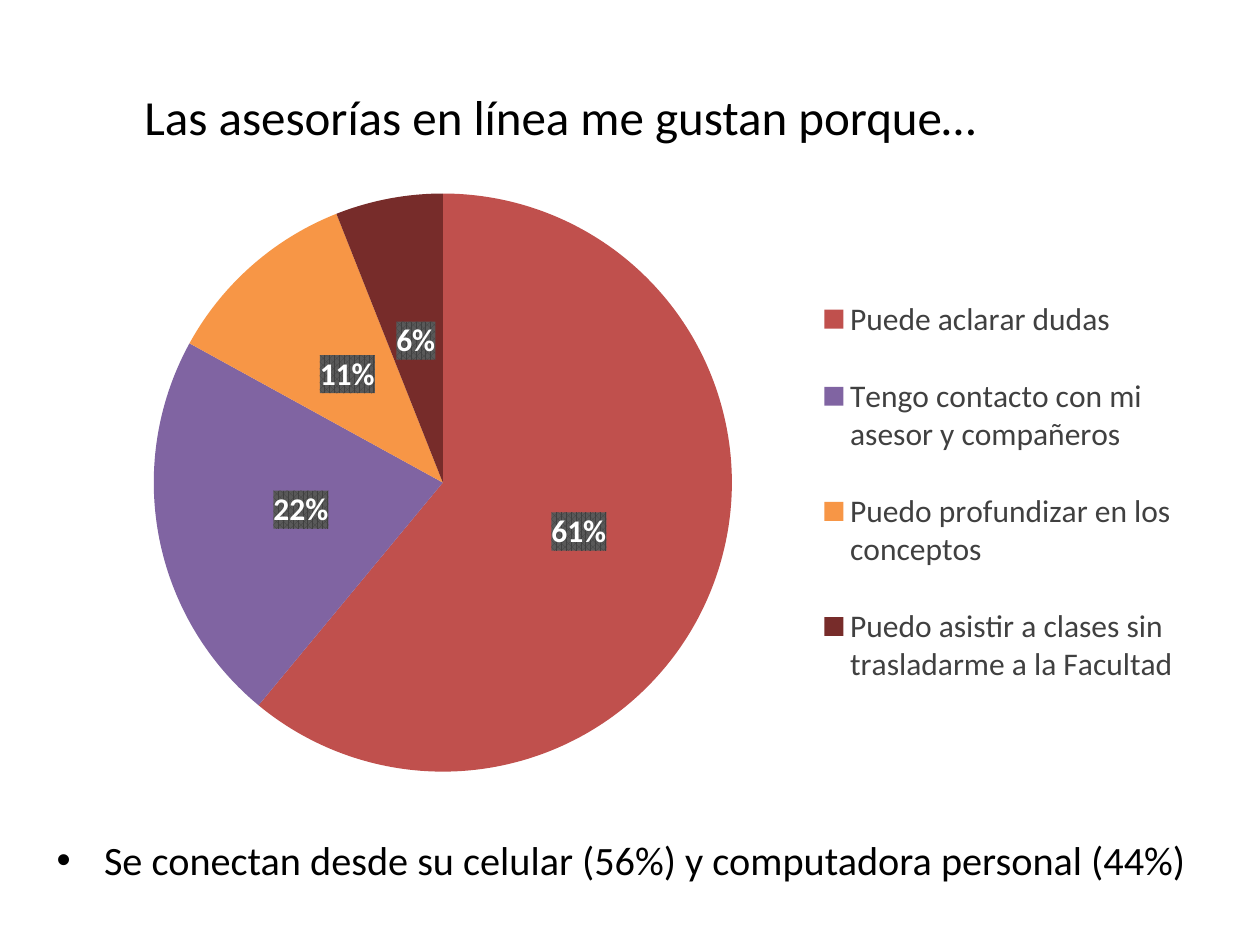
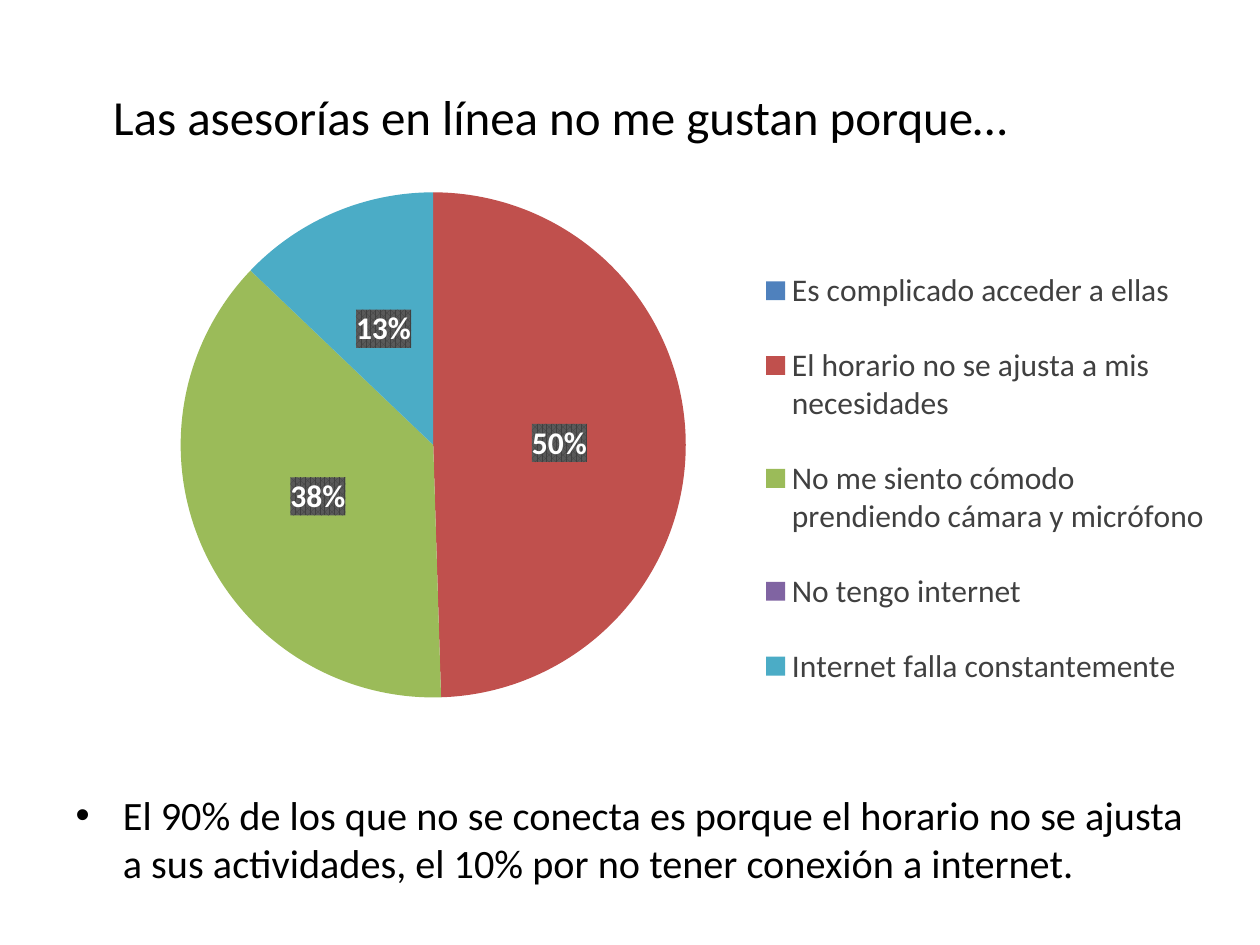
"""Build two survey slides, each with a title, a pie chart and a remark."""
from lxml import etree
from pptx import Presentation
from pptx import util as u
from pptx.chart.data import CategoryChartData
from pptx.dml.color import RGBColor
from pptx.enum import chart as charts, text
from pptx.oxml import parse_xml
from pptx.oxml.ns import nsdecls, qn

COLORS = {
    "ink": "000000", "legend": "404040", "label": "FFFFFF",
    "label_dark": "404040", "label_light": "595959",
    "blue": "4F81BD", "red": "C0504D", "green": "9BBB59", "violet": "8064A2",
    "aqua": "4BACC6", "orange": "F79646", "maroon": "772C2A",
}
FONTS = {
    "title": {"name": "Calibri", "size": u.Pt(28)},
    "remark": {"name": "Calibri", "size": u.Pt(23)},
    "chart": {"name": "Calibri", "size": u.Pt(10)},
    "legend": {"name": "Calibri", "size": u.Pt(18)},
    "label": {"name": "Calibri", "size": u.Pt(18), "bold": True},
}
TITLE_BOX = (1.27, 0.76, 20.04, 3.17)
SURVEYS = [
    {
        "title": "Las asesorías en línea me gustan porque…",
        "remark": "Se conectan desde su celular (56%) y computadora personal (44%)",
        "remark_box": (0.89, 16.71, 23.8, 1.88),
        "chart_box": (1.27, 3.53, 22.86, 12.4),
        "pie_area": (0.08, 0.03, 0.51, 0.94),
        "legend_area": (0.66, 0.14, 0.33, 0.75),
        "answers": [
            ("Puede aclarar dudas", 61, "red"),
            ("Tengo contacto con mi asesor y compañeros", 22, "violet"),
            ("Puedo profundizar en los conceptos", 11, "orange"),
            ("Puedo asistir a clases sin trasladarme a la Facultad", 6, "maroon"),
        ],
    },
    {
        "title": "Las asesorías en línea no me gustan porque…",
        "remark": "El 90% de los que no se conecta es porque el horario no se ajusta "
                  "a sus actividades, el 10% por no tener conexión a internet.",
        "remark_box": (1.27, 15.8, 23.04, 2.34),
        "chart_box": (1.24, 3.51, 23.42, 12.27),
        "pie_area": (0.02, 0.03, 0.6, 0.83),
        "legend_area": (0.6, 0.1, 0.39, 0.8),
        "answers": [
            ("Es complicado acceder a ellas", None, "blue"),
            ("El horario no se ajusta a mis necesidades", 50, "red"),
            ("No me siento cómodo prendiendo cámara y micrófono", 38, "green"),
            ("No tengo internet", None, "violet"),
            ("Internet falla constantemente", 13, "aqua"),
        ],
    },
]


def set_attributes(target, values):
    """Set every attribute named in values on the target."""
    for name, value in values.items():
        setattr(target, name, value)


def format_font(font, style, color):
    """Give a font one of the shared styles and a named colour."""
    set_attributes(font, FONTS[style])
    font.color.rgb = RGBColor.from_string(COLORS[color])


def fill_placeholder(placeholder, box, wording, style):
    """Move a placeholder to its box and write its text."""
    sides = ("left", "top", "width", "height")
    set_attributes(placeholder, dict(zip(sides, map(u.Cm, box))))
    frame = placeholder.text_frame
    frame.text = wording
    set_attributes(frame, {"word_wrap": True, "auto_size": text.MSO_AUTO_SIZE.NONE})
    paragraph = frame.paragraphs[0]
    paragraph.space_before = u.Pt(0)
    format_font(paragraph.font, style, "ink")


def make_layout(area, inner=False):
    """Return a manual chart layout for an area in fractions of the chart."""
    layout = parse_xml(f"<c:layout {nsdecls('c')}><c:manualLayout/></c:layout>")
    settings = [("layoutTarget", "inner")] if inner else []
    settings += [("xMode", "edge"), ("yMode", "edge"), *zip("xywh", area)]
    for name, value in settings:
        etree.SubElement(layout[0], qn(f"c:{name}")).set("val", str(value))
    return layout


def place_chart_parts(chart, pie_area, legend_area):
    """Fix the pie and the legend inside the chart."""
    plot_area = chart._chartSpace.find(f".//{qn('c:plotArea')}")
    legend = chart.legend._element
    for parent in (plot_area, legend):
        for layout in parent.findall(qn("c:layout")):
            parent.remove(layout)
    plot_area.insert(0, make_layout(pie_area, inner=True))
    legend.find(qn("c:legendPos")).addnext(make_layout(legend_area))


def add_percent_labels(series):
    """Show white percentages on a dark patterned ground."""
    labels = series.data_labels
    set_attributes(labels, {
        "show_percentage": True, "show_value": False, "number_format": "0%",
        "number_format_is_linked": False,
        "position": charts.XL_LABEL_POSITION.CENTER,
    })
    format_font(labels.font, "label", "label")
    ground = parse_xml(
        f'<c:spPr {nsdecls("c", "a")}><a:pattFill prst="pct75">'
        f'<a:fgClr><a:srgbClr val="{COLORS["label_dark"]}"/></a:fgClr>'
        f'<a:bgClr><a:srgbClr val="{COLORS["label_light"]}"/></a:bgClr>'
        '</a:pattFill></c:spPr>')
    labels._element.find(qn("c:txPr")).addprevious(ground)


def add_answer_pie(slide, box, answers, pie_area, legend_area):
    """Add the pie of answers with its legend in the given box."""
    names, shares, colors = zip(*answers)
    data = CategoryChartData()
    data.categories = names
    data.add_series("Series 1", shares)
    chart = slide.shapes.add_chart(
        charts.XL_CHART_TYPE.PIE, *map(u.Cm, box), data).chart
    set_attributes(chart, {"has_title": False, "has_legend": True})
    format_font(chart.font, "chart", "ink")
    set_attributes(chart.legend, {
        "position": charts.XL_LEGEND_POSITION.RIGHT, "include_in_layout": False})
    format_font(chart.legend.font, "legend", "legend")
    plot = chart.plots[0]
    plot.vary_by_categories = True
    series = plot.series[0]
    for index, color in enumerate(colors):
        slice_format = series.points[index].format
        slice_format.fill.solid()
        slice_format.fill.fore_color.rgb = RGBColor.from_string(COLORS[color])
        slice_format.line.fill.background()
    add_percent_labels(series)
    place_chart_parts(chart, pie_area, legend_area)


def add_survey_slide(presentation, survey):
    """Add one survey slide: title, remark and pie."""
    slide = presentation.slides.add_slide(presentation.slide_layouts[1])
    fill_placeholder(slide.shapes.title, TITLE_BOX, survey["title"], "title")
    fill_placeholder(slide.placeholders[1], survey["remark_box"],
                     survey["remark"], "remark")
    add_answer_pie(slide, survey["chart_box"], survey["answers"],
                   survey["pie_area"], survey["legend_area"])


def main():
    """Build and save the presentation."""
    presentation = Presentation()
    set_attributes(presentation, {
        "slide_width": u.Cm(25.4), "slide_height": u.Cm(19.05)})
    for survey in SURVEYS:
        add_survey_slide(presentation, survey)
    presentation.save("out.pptx")


if __name__ == "__main__":
    main()
